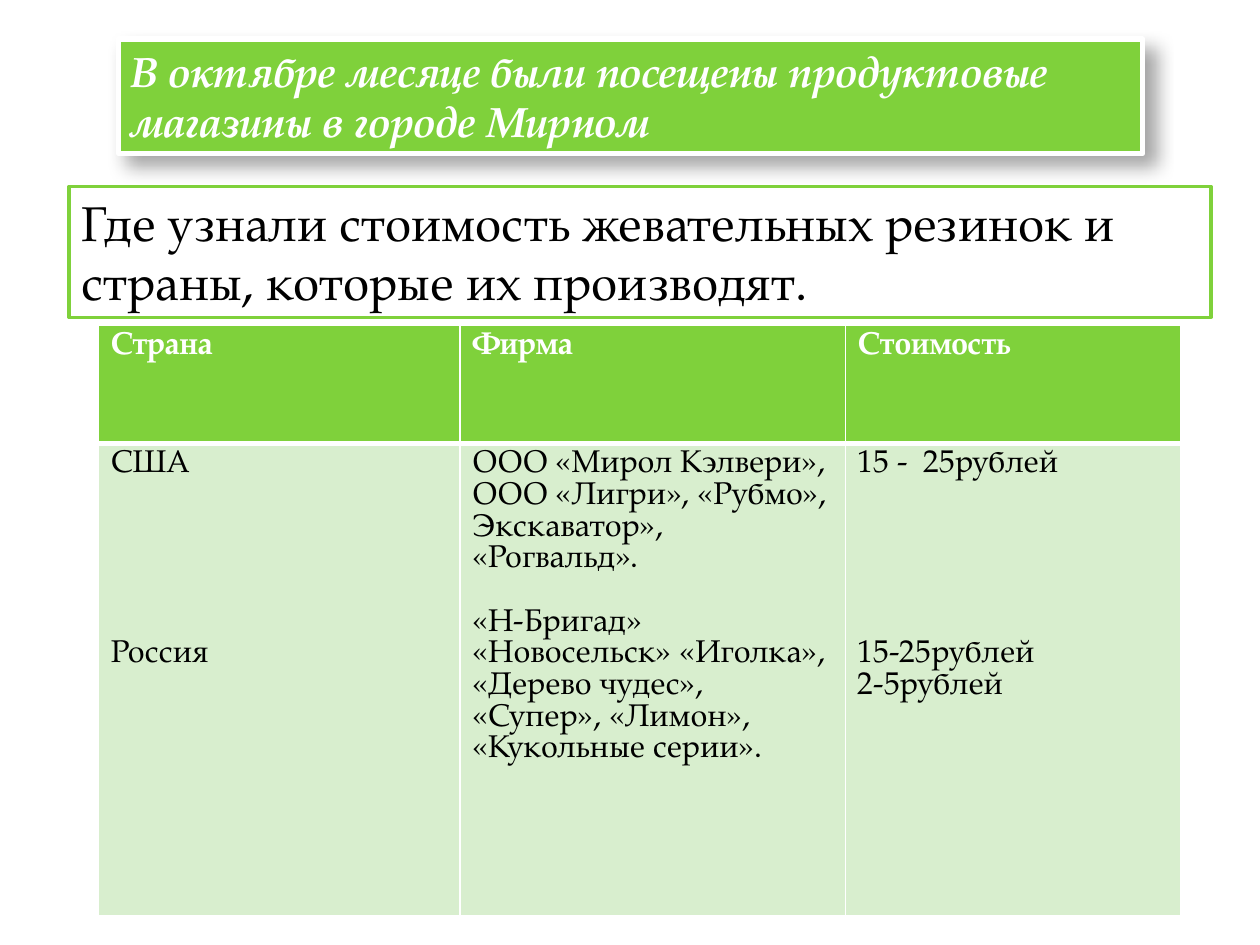
"""Build the slide on chewing gum prices found in the town's shops."""
from lxml import etree
from pptx import Presentation
from pptx import util as u
from pptx.dml.color import RGBColor
from pptx.enum import shapes, text
from pptx.oxml import ns

HUES = {"green": "7FD13B", "pale": "D8EECE", "white": "FFFFFF", "black": "000000"}
FONT = "TeX Gyre Pagella"
BOXES = [
    dict(words="В октябре месяце были посещены продуктовые магазины в городе Мирном",
         at=(0.94, 0.31, 8.13, 0.91), fill="green", line="white", width=3,
         size=24, ink="white", bold=True, slant=True, shade=True),
    dict(words="Где узнали стоимость жевательных резинок и страны, которые их производят.",
         at=(0.55, 1.48, 9.06, 1.04), fill="white", line="green", width=2,
         size=28, ink="black", bold=False, slant=False, shade=False),
]
HEAD = ["Страна", "Фирма", "Стоимость"]
BODY = [
    [("США", 0), ("Россия", 5)],
    [("ООО «Мирол Кэлвери», ООО «Лигри», «Рубмо», Экскаватор», «Рогвальд».", 0),
     ("«Н-Бригад»", 1),
     ("«Новосельск» «Иголка», «Дерево чудес», «Супер», «Лимон», «Кукольные серии».", 0)],
    [("15 -  25рублей", 0), ("15-25рублей", 5), ("2-5рублей", 0)],
]
COLS, ROWS = (2.87, 3.06, 2.66), (0.94, 3.75)
SPOT = (0.78, 2.58)
SIZE, PITCH = 18, 18.1


def rgb(hue):
    return RGBColor.from_string(HUES[hue])


def paint(fill, hue):
    fill.solid()
    fill.fore_color.rgb = rgb(hue)


def write(para, words, size, ink, bold=False, slant=False):
    para.alignment = text.PP_ALIGN.LEFT
    run = para.add_run()
    run.text = words
    font = run.font
    font.name, font.size, font.bold, font.italic = FONT, u.Pt(size), bold, slant
    font.color.rgb = rgb(ink)


def shade(shape):
    glow = shape._element.spPr.find(ns.qn("a:effectLst"))
    drop = etree.SubElement(glow, ns.qn("a:outerShdw"), blurRad=str(u.Pt(10.2)),
                            dist=str(u.Pt(8)), dir=str(45 * 60000),
                            algn="tl", rotWithShape="0")
    tone = etree.SubElement(drop, ns.qn("a:srgbClr"), val=HUES["black"])
    etree.SubElement(tone, ns.qn("a:alpha"), val="35000")


def edge(cell, widths):
    props = cell._tc.get_or_add_tcPr()
    for side, width in widths.items():
        line = etree.SubElement(props, ns.qn("a:ln" + side), w=str(u.Pt(width)))
        fill = etree.SubElement(line, ns.qn("a:solidFill"))
        etree.SubElement(fill, ns.qn("a:srgbClr"), val=HUES["white"])


def fill_cell(cell, paras, hue, ink, bold, widths):
    edge(cell, widths)
    paint(cell.fill, hue)
    for i, (words, gap) in enumerate(paras):
        para = cell.text_frame.paragraphs[0] if i == 0 else cell.text_frame.add_paragraph()
        para.space_before = u.Pt(gap * PITCH)
        write(para, words, SIZE, ink, bold)


def add_grid(slide):
    place = map(u.Inches, (*SPOT, sum(COLS), sum(ROWS)))
    grid = slide.shapes.add_table(len(ROWS), len(COLS), *place).table
    for row, tall in zip(grid.rows, ROWS):
        row.height = u.Inches(tall)
    for i, wide in enumerate(COLS):
        grid.columns[i].width = u.Inches(wide)
        fill_cell(grid.cell(0, i), [(HEAD[i], 0)], "green", "white", True,
                  dict(L=1, R=1, T=1, B=3))
        fill_cell(grid.cell(1, i), BODY[i], "pale", "black", False,
                  dict(L=1, R=1, T=3, B=1))


def add_box(slide, box):
    shape = slide.shapes.add_shape(shapes.MSO_SHAPE.RECTANGLE, *map(u.Inches, box["at"]))
    shape.shadow.inherit = False
    paint(shape.fill, box["fill"])
    shape.line.color.rgb = rgb(box["line"])
    shape.line.width = u.Pt(box["width"])
    if box["shade"]:
        shade(shape)
    frame = shape.text_frame
    frame.word_wrap = True
    frame.vertical_anchor = text.MSO_ANCHOR.TOP
    frame.auto_size = text.MSO_AUTO_SIZE.SHAPE_TO_FIT_TEXT
    write(frame.paragraphs[0], box["words"], box["size"], box["ink"],
          box["bold"], box["slant"])


def main():
    deck = Presentation()
    deck.slide_width, deck.slide_height = u.Inches(10), u.Inches(7.5)
    slide = deck.slides.add_slide(deck.slide_layouts[6])
    add_grid(slide)
    for box in BOXES:
        add_box(slide, box)
    deck.save("out.pptx")


if __name__ == "__main__":
    main()
